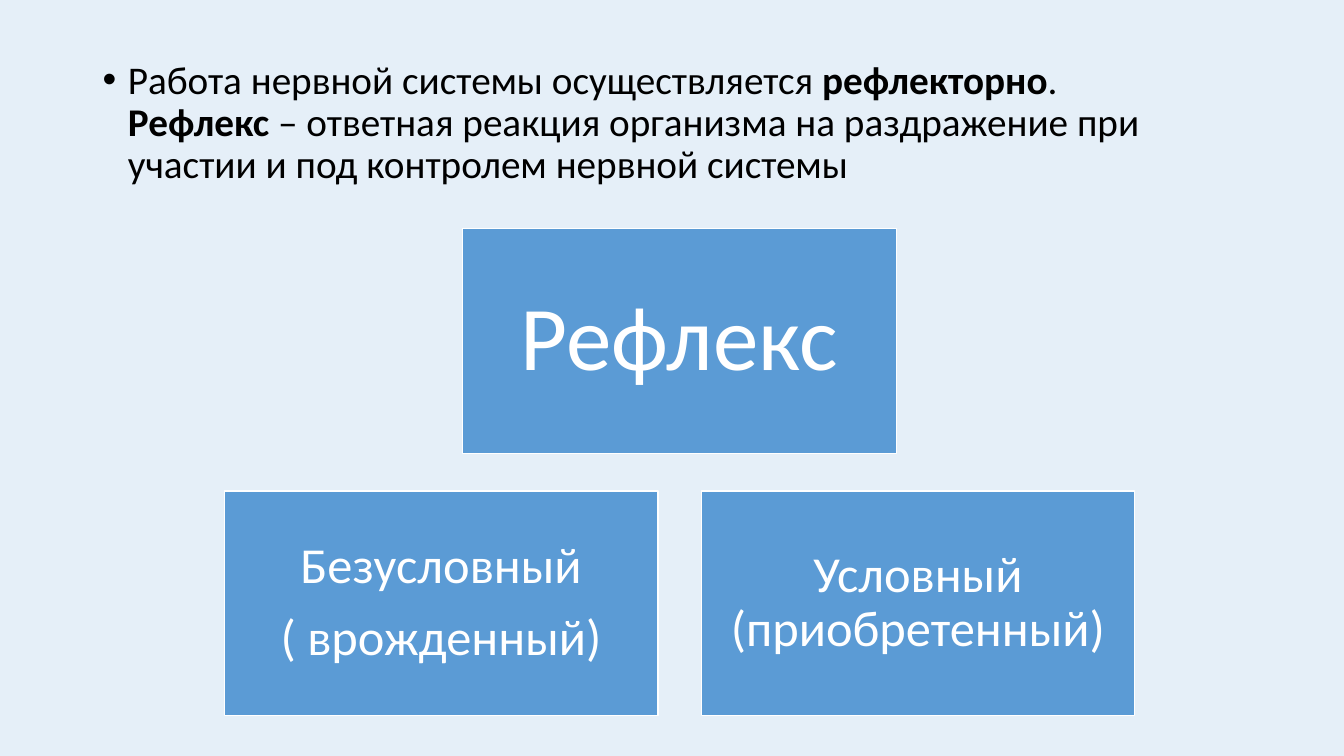
from dataclasses import dataclass

from lxml.etree import SubElement
from pptx import Presentation
from pptx.dml.color import RGBColor
from pptx.enum.shapes import MSO_SHAPE
from pptx.enum.text import MSO_ANCHOR, PP_ALIGN
from pptx.oxml.ns import qn
from pptx.util import Inches, Pt

# Content: each line is a list of (text, bold) runs
DEFINITION = [
    [("Работа нервной системы осуществляется ", False), ("рефлекторно", True), (".", False)],
    [("Рефлекс ", True),
     ("– ответная реакция организма на раздражение при участии и под контролем нервной системы", False)],
]
# Boxes: (column offset from the centre, row, paragraphs, type size)
BOXES = [
    (0, 0, ["Рефлекс"], 65),
    (-0.5, 1, ["Безусловный", "( врожденный)"], 36),
    (0.5, 1, ["Условный (приобретенный)"], 36),
]


@dataclass(frozen=True)
class Theme:
    font: str = "Calibri"
    background: str = "E5EFF8"
    box: str = "5B9BD5"
    white: str = "FFFFFF"
    black: str = "000000"
    body: int = 28


THEME = Theme()

# Layout in inches
SLIDE_W, SLIDE_H = 13.33, 7.5
BODY = (0.92, 0.55, 11.5, 6.21)
BOX_W, BOX_H = 4.3, 2.23
STEP_X, STEP_Y = 4.73, 2.6
CENTER_X, TOP_Y = 6.74, 2.27
BOX_INSET = 0.27
INDENT = 0.25


def rgb(value):
    return RGBColor.from_string(value)


def write(p, lines, *, size, color, align=PP_ALIGN.LEFT, before=0, after=0):
    """Fill a paragraph with lines of (text, bold) runs."""
    p.alignment = align
    p.line_spacing = 0.9
    p.space_before, p.space_after = Pt(before), Pt(after)
    for i, line in enumerate(lines):
        if i:
            p.add_line_break()
        for text, bold in line:
            r = p.add_run()
            r.text = text
            r.font.name, r.font.size, r.font.bold = THEME.font, Pt(size), bold
            r.font.color.rgb = rgb(color)


def add_bullet(p):
    pPr = p._p.get_or_add_pPr()
    pPr.set("marL", str(Inches(INDENT)))
    pPr.set("indent", str(-Inches(INDENT)))
    SubElement(pPr, qn("a:buFont"), typeface="Arial")
    SubElement(pPr, qn("a:buChar"), char="•")


def add_definition(s):
    tf = s.shapes.add_textbox(*map(Inches, BODY)).text_frame
    tf.word_wrap = True
    p = tf.paragraphs[0]
    write(p, DEFINITION, size=THEME.body, color=THEME.black, before=10)
    add_bullet(p)


def add_box(s, column, row, paragraphs, size):
    left = CENTER_X + column * STEP_X - BOX_W / 2
    top = TOP_Y + row * STEP_Y
    sp = s.shapes.add_shape(MSO_SHAPE.RECTANGLE, *map(Inches, (left, top, BOX_W, BOX_H)))
    sp.shadow.inherit = False
    sp.fill.solid()
    sp.fill.fore_color.rgb = rgb(THEME.box)
    sp.line.color.rgb = rgb(THEME.white)
    sp.line.width = Pt(1)
    tf = sp.text_frame
    tf.word_wrap = True
    tf.vertical_anchor = MSO_ANCHOR.MIDDLE
    tf.margin_left = tf.margin_right = tf.margin_top = tf.margin_bottom = Inches(BOX_INSET)
    for i, text in enumerate(paragraphs):
        p = tf.add_paragraph() if i else tf.paragraphs[0]
        write(p, [[(text, False)]], size=size, color=THEME.white,
              align=PP_ALIGN.CENTER, after=0.35 * size)


def main():
    prs = Presentation()
    prs.slide_width, prs.slide_height = Inches(SLIDE_W), Inches(SLIDE_H)
    s = prs.slides.add_slide(prs.slide_layouts[6])
    s.background.fill.solid()
    s.background.fill.fore_color.rgb = rgb(THEME.background)
    add_definition(s)
    for box in BOXES:
        add_box(s, *box)
    prs.save("out.pptx")


if __name__ == "__main__":
    main()
